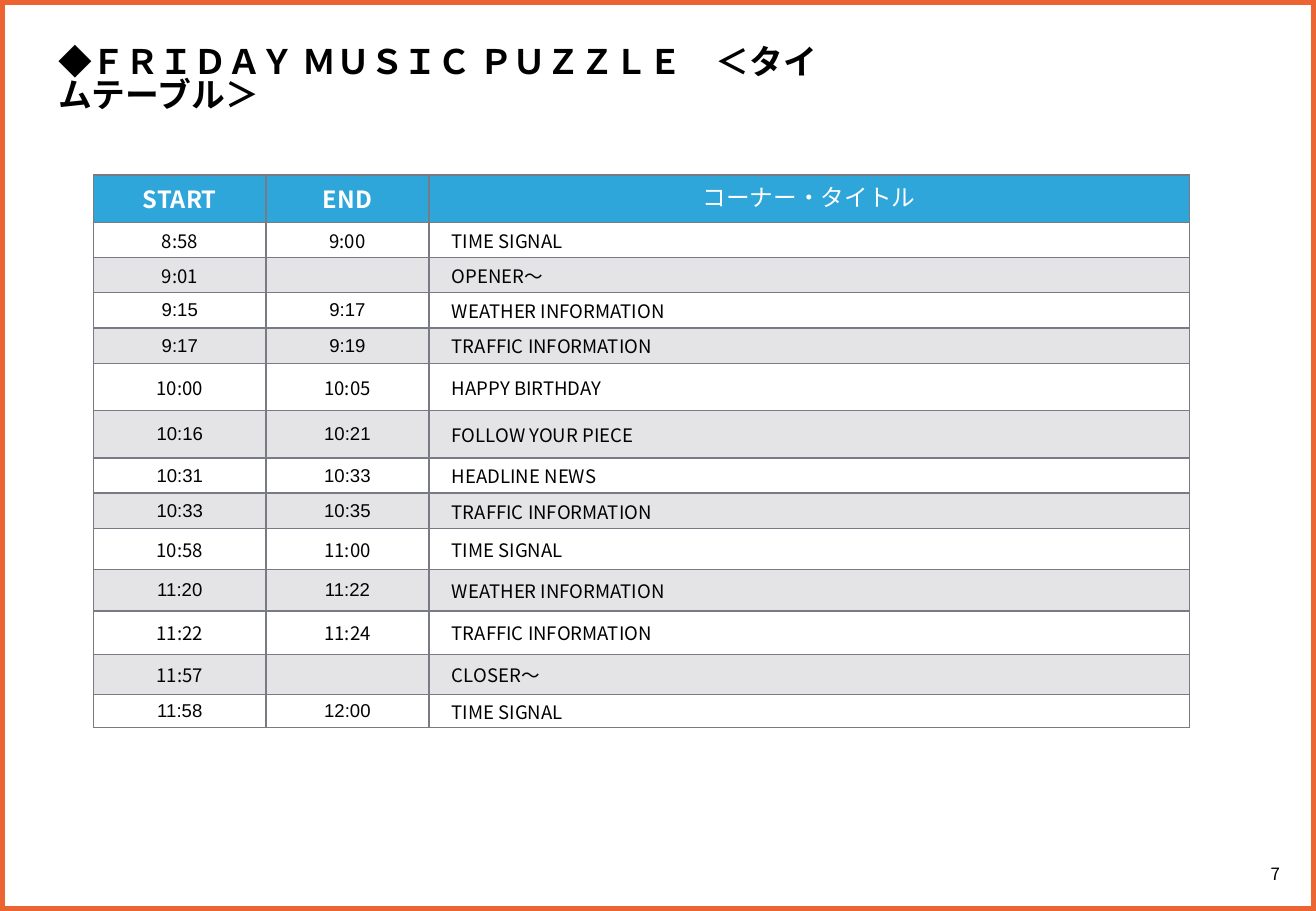
from lxml.etree import SubElement
from pptx import Presentation
from pptx.dml.color import RGBColor
from pptx.enum.shapes import MSO_SHAPE
from pptx.enum.text import MSO_ANCHOR, PP_ALIGN
from pptx.oxml.ns import qn
from pptx.util import Inches, Pt

NOTO, ARIAL = "Noto Sans CJK JP", "Arial"
BLACK, WHITE, ORANGE, BLUE, GREY = "000000", "FFFFFF", "EB6432", "2EA6DA", "797B84"

HEADER = [("START", NOTO, True), ("END", NOTO, True), ("コーナー・タイトル", ARIAL, False)]
HEADER_HEIGHT = 5.2
COLUMN_WIDTHS = [13.11, 12.37, 57.8]
# start, end, corner title, font of the times, row height
TIMETABLE = [
    ("8:58", "9:00", "TIME SIGNAL", NOTO, 3.87),
    ("9:01", "", "OPENER〜", NOTO, 3.87),
    ("9:15", "9:17", "WEATHER INFORMATION", ARIAL, 3.87),
    ("9:17", "9:19", "TRAFFIC INFORMATION", ARIAL, 3.87),
    ("10:00", "10:05", "HAPPY BIRTHDAY", NOTO, 5.2),
    ("10:16", "10:21", "FOLLOW YOUR PIECE", ARIAL, 5.2),
    ("10:31", "10:33", "HEADLINE NEWS", ARIAL, 3.87),
    ("10:33", "10:35", "TRAFFIC INFORMATION", ARIAL, 3.87),
    ("10:58", "11:00", "TIME SIGNAL", NOTO, 4.53),
    ("11:20", "11:22", "WEATHER INFORMATION", ARIAL, 4.53),
    ("11:22", "11:24", "TRAFFIC INFORMATION", NOTO, 4.8),
    ("11:57", "", "CLOSER〜", NOTO, 4.4),
    ("11:58", "12:00", "TIME SIGNAL", ARIAL, 3.6),
]


def color(hex_code):
    return RGBColor.from_string(hex_code)


class Page:
    """One slide; lengths are percentages of its width and height."""

    def __init__(self, deck):
        self.width, self.height = deck.slide_width, deck.slide_height
        self.slide = deck.slides.add_slide(deck.slide_layouts[6])

    def across(self, share):
        return round(self.width * share / 100)

    def down(self, share):
        return round(self.height * share / 100)

    def area(self, left, top, width, height):
        return self.across(left), self.down(top), self.across(width), self.down(height)

    def run(self, paragraph, words, size, font=NOTO, ink=BLACK, bold=False):
        run = paragraph.add_run()
        run.text = words
        run.font.size, run.font.bold, run.font.name = Pt(size), bold, font
        run.font.color.rgb = color(ink)
        SubElement(run.font._element, qn("a:ea"), typeface=font)

    def frame(self):
        border = self.slide.shapes.add_shape(MSO_SHAPE.RECTANGLE, *self.area(0, 0, 100, 100))
        border.shadow.inherit = False
        border.fill.background()
        border.line.color.rgb, border.line.width = color(ORANGE), Pt(6)

    def text(self, area, anchor, align):
        """Add an empty text box and return its paragraph."""
        text_frame = self.slide.shapes.add_textbox(*self.area(*area)).text_frame
        text_frame.word_wrap, text_frame.vertical_anchor = True, anchor
        paragraph = text_frame.paragraphs[0]
        paragraph.alignment = align
        return paragraph

    def table(self, left, top, widths, heights):
        area = self.area(left, top, sum(widths), sum(heights))
        table = self.slide.shapes.add_table(len(heights), len(widths), *area).table
        table.first_row = table.horz_banding = False
        for column, width in zip(table.columns, widths):
            column.width = self.across(width)
        for row, height in zip(table.rows, heights):
            row.height = self.down(height)
        return table

    def cell(self, cell, words, size, fill, alpha=100, indent=None, **style):
        """Fill one cell; an indent makes its text left-aligned."""
        cell.margin_left = self.across(indent or 0)
        cell.margin_right = cell.margin_top = cell.margin_bottom = 0
        cell.vertical_anchor = MSO_ANCHOR.MIDDLE
        paragraph = cell.text_frame.paragraphs[0]
        paragraph.alignment = PP_ALIGN.CENTER if indent is None else PP_ALIGN.LEFT
        if words:
            self.run(paragraph, words, size, **style)
        else:
            SubElement(paragraph._p, qn("a:endParaRPr"), sz=str(size * 100))
        properties = cell._tc.get_or_add_tcPr()
        for side in ("lnL", "lnR", "lnT", "lnB"):
            edge = SubElement(properties, qn(f"a:{side}"), w=str(Pt(1)))
            SubElement(SubElement(edge, qn("a:solidFill")), qn("a:srgbClr"), val=GREY)
        cell.fill.solid()
        cell.fill.fore_color.rgb = color(fill)
        if alpha < 100:
            tint = properties.find(qn("a:solidFill")).find(qn("a:srgbClr"))
            SubElement(tint, qn("a:alpha"), val=str(alpha * 1000))


def main():
    deck = Presentation()
    deck.slide_width, deck.slide_height = Inches(10.83), Inches(7.5)
    page = Page(deck)

    page_number = page.text((93.81, 93.6, 6.19, 4.67), MSO_ANCHOR.MIDDLE, PP_ALIGN.CENTER)
    page.run(page_number, "7", 10)
    page.frame()

    title = page.text((3.51, 4.6, 60.39, 10.2), MSO_ANCHOR.TOP, PP_ALIGN.LEFT)
    title.line_spacing = 0.82
    page.run(title, "◆", 20)
    page.run(title, "ＦＲＩＤＡＹ ＭＵＳＩＣ ＰＵＺＺＬＥ　＜タイムテーブル＞", 20, bold=True)

    heights = [HEADER_HEIGHT] + [entry[-1] for entry in TIMETABLE]
    timetable = page.table(7.11, 19.2, COLUMN_WIDTHS, heights)
    for column, (label, font, bold) in enumerate(HEADER):
        page.cell(timetable.cell(0, column), label, 14, BLUE, font=font, ink=WHITE, bold=bold)
    for row, (start, end, corner, time_font, _) in enumerate(TIMETABLE, 1):
        fill, alpha = (WHITE, 100) if row % 2 else (GREY, 20)
        for column, time in enumerate((start, end)):
            page.cell(timetable.cell(row, column), time, 11, fill, alpha, font=time_font)
        page.cell(timetable.cell(row, 2), corner, 11, fill, alpha, indent=1.75)

    deck.save("out.pptx")


if __name__ == "__main__":
    main()
